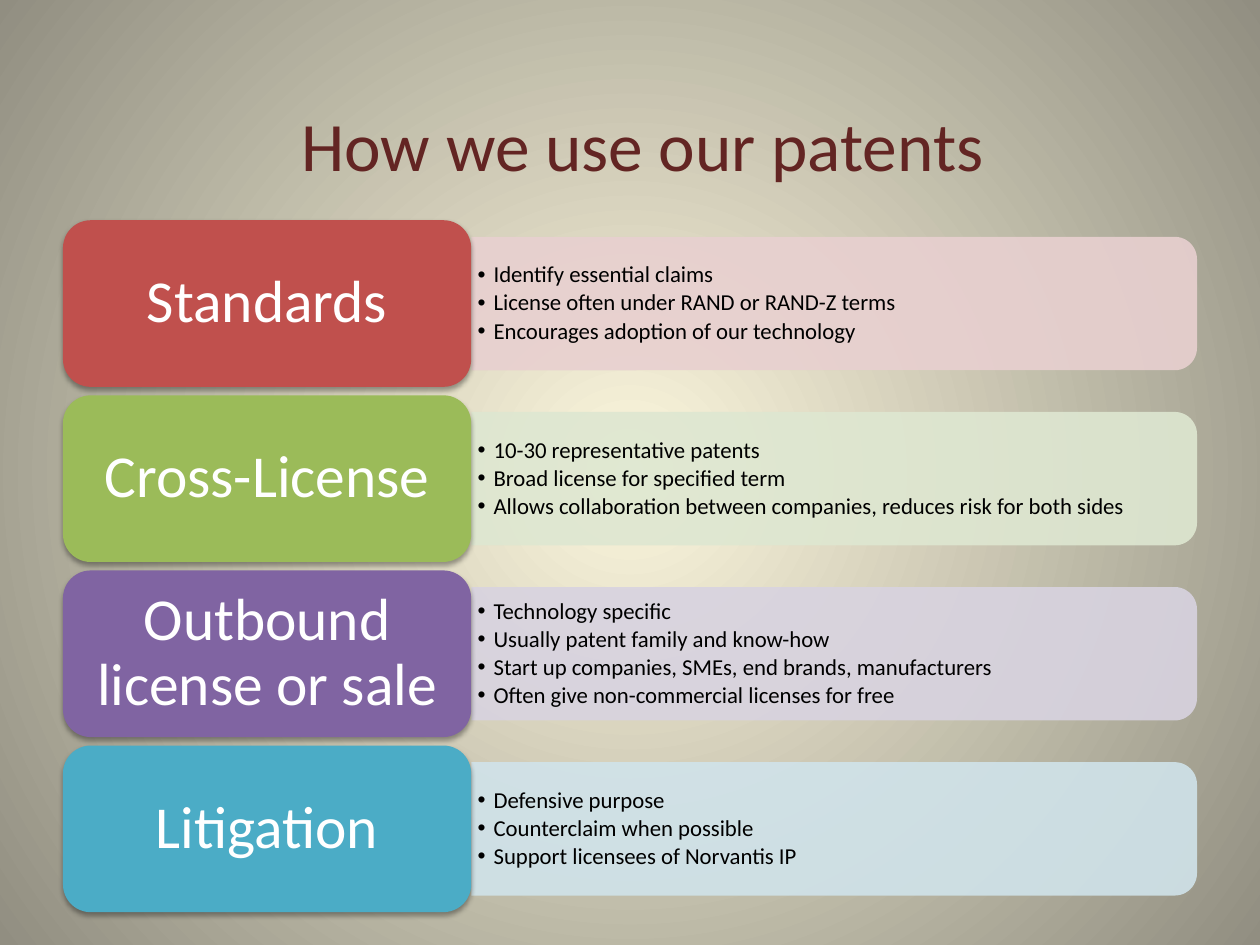
"""Build the slide on four ways to use patents."""
from lxml import etree
from pptx import Presentation, util as u
from pptx.dml.color import RGBColor
from pptx.enum import shapes, text
from pptx.oxml.ns import qn

HUES = {
    "title": "632523", "text": "000000", "label": "FFFFFF",
    "glow": "FCF7DD", "edge": "918E81", "shade": "000000",
    "red": "C0504D", "rose": "E8D0D0",
    "green": "9BBB59", "mint": "DEE7D1",
    "plum": "8064A2", "lilac": "D8D3E0",
    "teal": "4BACC6", "sky": "D0E3EA",
}

ROWS = [
    ("Standards", "red", "rose", [
        "Identify essential claims",
        "License often under RAND or RAND-Z terms",
        "Encourages adoption of our technology"]),
    ("Cross-License", "green", "mint", [
        "10-30 representative patents",
        "Broad license for specified term",
        "Allows collaboration between companies, reduces risk for both sides"]),
    ("Outbound license or sale", "plum", "lilac", [
        "Technology specific",
        "Usually patent family and know-how",
        "Start up companies, SMEs, end brands, manufacturers",
        "Often give non-commercial licenses for free"]),
    ("Litigation", "teal", "sky", [
        "Defensive purpose",
        "Counterclaim when possible",
        "Support licensees of Norvantis IP"]),
]

LEFT, SPLIT = 1.27, 9.5
FIRST, PITCH = 6.12, 3.53
CARD_W, CARD_H = 8.23, 3.36
BAR_W, BAR_H = 14.63, 2.69
LIST_W, LIST_H = 14.5, 2.44


def tint(hue):
    return RGBColor.from_string(HUES[hue])


def sub(node, tag, **attrs):
    return etree.SubElement(node, qn(tag), attrs)


class Deck:
    """Hold the style and the current slide."""

    def __init__(self):
        self.prs = Presentation()
        self.prs.slide_width, self.prs.slide_height = u.Cm(25.4), u.Cm(19.05)
        self.font = "Calibri"
        self.slide = self.prs.slides.add_slide(self.prs.slide_layouts[4])

    def place(self, item, x, y, w, h):
        item.left, item.top = u.Cm(x), u.Cm(y)
        item.width, item.height = u.Cm(w), u.Cm(h)

    def frame(self, item, side, rim):
        box = item.text_frame
        box.word_wrap = True
        box.auto_size = text.MSO_AUTO_SIZE.NONE
        box.vertical_anchor = text.MSO_ANCHOR.MIDDLE
        box.margin_left = box.margin_right = u.Cm(side)
        box.margin_top = box.margin_bottom = u.Cm(rim)
        return box

    def run(self, para, words, size, hue):
        run = para.add_run()
        run.text = words
        run.font.name, run.font.size = self.font, u.Pt(size)
        run.font.bold = False
        run.font.color.rgb = tint(hue)

    def backdrop(self):
        fill = self.slide.background.fill
        fill.gradient()
        for stop, hue, spot in zip(fill.gradient_stops, ("glow", "edge"), (0, 1)):
            stop.color.rgb, stop.position = tint(hue), spot
        line = self.slide.element.find(".//" + qn("a:lin"))
        grad = line.getparent()
        grad.remove(line)
        ring = sub(grad, "a:path", path="circle")
        sub(ring, "a:fillToRect", l="50000", t="50000", r="50000", b="50000")

    def title(self, words):
        head = self.slide.shapes.title
        self.place(head, 1.07, 1.9, 23.77, 1.98)
        para = self.frame(head, 0.25, 0.13).paragraphs[0]
        para.alignment = text.PP_ALIGN.CENTER
        self.run(para, words, 39.6, "title")

    def block(self, kind, x, y, w, h, hue):
        item = self.slide.shapes.add_shape(
            kind, u.Cm(x), u.Cm(y), u.Cm(w), u.Cm(h))
        item.shadow.inherit = False
        item.fill.solid()
        item.fill.fore_color.rgb = tint(hue)
        item.line.fill.background()
        return item

    def bar(self, mid, hue):
        x = SPLIT + (BAR_W - BAR_H) / 2
        item = self.block(shapes.MSO_SHAPE.ROUND_2_SAME_RECTANGLE,
                          x, mid - BAR_W / 2, BAR_H, BAR_W, hue)
        item.rotation = 90
        color = item.element.spPr.find(qn("a:solidFill"))[0]
        sub(color, "a:alpha", val="90000")

    def points(self, item, mid, lines):
        self.place(item, SPLIT, mid - LIST_H / 2, LIST_W, LIST_H)
        item.element.getparent().append(item.element)
        box = self.frame(item, 0.13, 0.08)
        for i, words in enumerate(lines):
            para = box.add_paragraph() if i else box.paragraphs[0]
            para.alignment = text.PP_ALIGN.LEFT
            para.line_spacing = 0.9
            para.space_before, para.space_after = u.Pt(0), u.Pt(1.95)
            props = para._p.get_or_add_pPr()
            props.set("marL", str(u.Cm(0.32)))
            props.set("indent", str(u.Cm(-0.32)))
            sub(props, "a:buFont", typeface="Arial")
            sub(props, "a:buChar", char="•")
            self.run(para, words, 13, "text")

    def card(self, mid, words, hue):
        item = self.block(shapes.MSO_SHAPE.ROUNDED_RECTANGLE,
                          LEFT, mid - CARD_H / 2, CARD_W, CARD_H, hue)
        glow = sub(item.element.spPr.find(qn("a:effectLst")), "a:outerShdw",
                   blurRad=str(u.Pt(3.1)), dist=str(u.Pt(1.8)),
                   dir="5400000", rotWithShape="0")
        sub(sub(glow, "a:srgbClr", val=HUES["shade"]), "a:alpha", val="35000")
        para = self.frame(item, 0.36, 0.18).paragraphs[0]
        para.alignment = text.PP_ALIGN.CENTER
        para.line_spacing = 0.9
        self.run(para, words, 34, "label")


def main():
    deck = Deck()
    deck.backdrop()
    deck.title("How we use our patents")
    lists = [p for p in deck.slide.placeholders
             if 1 <= p.placeholder_format.idx <= 4]
    for i, (name, hue, pale, lines) in enumerate(ROWS):
        mid = FIRST + i * PITCH
        deck.bar(mid, pale)
        deck.points(lists[i], mid, lines)
        deck.card(mid, name, hue)
    deck.prs.save("out.pptx")


if __name__ == "__main__":
    main()
